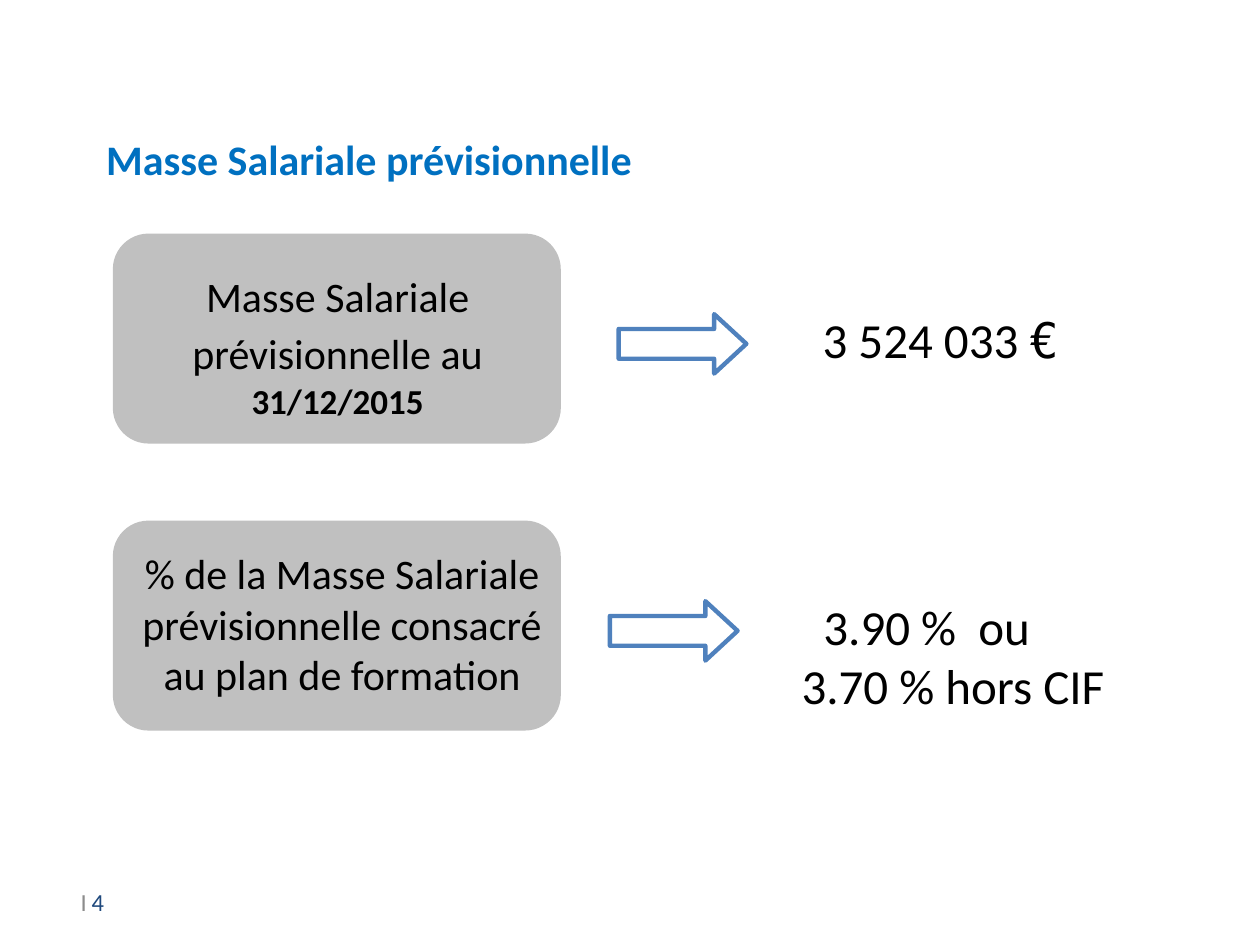
from pptx import Presentation
from pptx import util as u
from pptx.dml.color import RGBColor
from pptx.enum import shapes, text

Pt = u.Pt
FONT = "Calibri"


def colour(value):
    return RGBColor.from_string(value)


def write(box, runs, align=text.PP_ALIGN.LEFT, anchor=text.MSO_ANCHOR.TOP):
    """Fill the first paragraph with (words, size, bold, colour, font) runs."""
    frame = box.text_frame
    frame.word_wrap = True
    frame.auto_size = text.MSO_AUTO_SIZE.NONE
    frame.vertical_anchor = anchor
    para = frame.paragraphs[0]
    para.alignment = align
    for words, size, bold, tint, font in runs:
        if words == "\n":
            para.add_line_break()
            continue
        span = para.add_run()
        span.text = words
        span.font.size = Pt(size)
        span.font.bold = bold
        span.font.name = font
        span.font.color.rgb = colour(tint)
    return para


deck = Presentation()
deck.slide_width, deck.slide_height = Pt(720), Pt(540)
page = deck.slides.add_slide(deck.slide_layouts[5])

# Title
title = page.shapes.title
title.left, title.top, title.width, title.height = Pt(53.5), Pt(72.5), Pt(555), Pt(60)
write(title, [("Masse Salariale prévisionnelle", 24, True, "0070C0", FONT)])

# Rows: box top, arrow left, label area, label runs, value area, value indent, value runs
rows = [
    (134, 353.5, (88, 151, 210, 130),
     [("Masse Salariale prévisionnelle au", 24, False, "000000", FONT),
      (" ", 28, False, "000000", FONT),
      ("31/12/2015", 20, True, "000000", FONT)],
     (463, 173.5, 198, 41), 0,
     [("3 524 033 ", 28, False, "000000", FONT),
      ("€", 28, False, "000000", "DejaVu Sans Mono")]),
    (298, 348.5, (65, 309.6, 261, 144),
     [("% de la Masse Salariale prévisionnelle consacré au plan de formation",
       24, False, "000000", FONT)],
     (451, 337.5, 199, 75), 12.5,
     [("3.90 %  ou", 28, False, "000000", FONT),
      ("\n", 28, False, "000000", FONT),
      ("3.70 % hors CIF", 28, False, "000000", FONT)]),
]

for top, arrow_left, label_area, label_runs, value_area, indent, value_runs in rows:
    # Grey panel
    panel = page.shapes.add_shape(shapes.MSO_SHAPE.ROUNDED_RECTANGLE,
                                  Pt(65), Pt(top), Pt(255), Pt(119))
    panel.shadow.inherit = False
    panel.adjustments[0] = 0.167
    panel.fill.solid()
    panel.fill.fore_color.rgb = colour("C0C0C0")
    panel.line.color.rgb = colour("C0C0C0")
    panel.line.width = Pt(1)

    # Label
    label = page.shapes.add_textbox(*map(Pt, label_area))
    write(label, label_runs, text.PP_ALIGN.CENTER)

    # Arrow
    arrow = page.shapes.add_shape(shapes.MSO_SHAPE.RIGHT_ARROW,
                                  Pt(arrow_left), Pt(top + 45.5), Pt(73), Pt(34))
    arrow.shadow.inherit = False
    arrow.adjustments[1] = 0.542
    arrow.fill.background()
    arrow.line.color.rgb = colour("4F81BD")
    arrow.line.width = Pt(2.5)

    # Value
    value = page.shapes.add_textbox(*map(Pt, value_area))
    para = write(value, value_runs)
    para._p.get_or_add_pPr().set("indent", str(Pt(indent)))

# Page number
number = page.shapes.add_textbox(Pt(39), Pt(500.5), Pt(165), Pt(29))
write(number, [("I", 14, False, "8C8C8C", FONT),
               (" ", 12, False, "8C8C8C", FONT),
               ("4", 14, False, "1F497D", FONT)],
      anchor=text.MSO_ANCHOR.MIDDLE)

deck.save("out.pptx")
